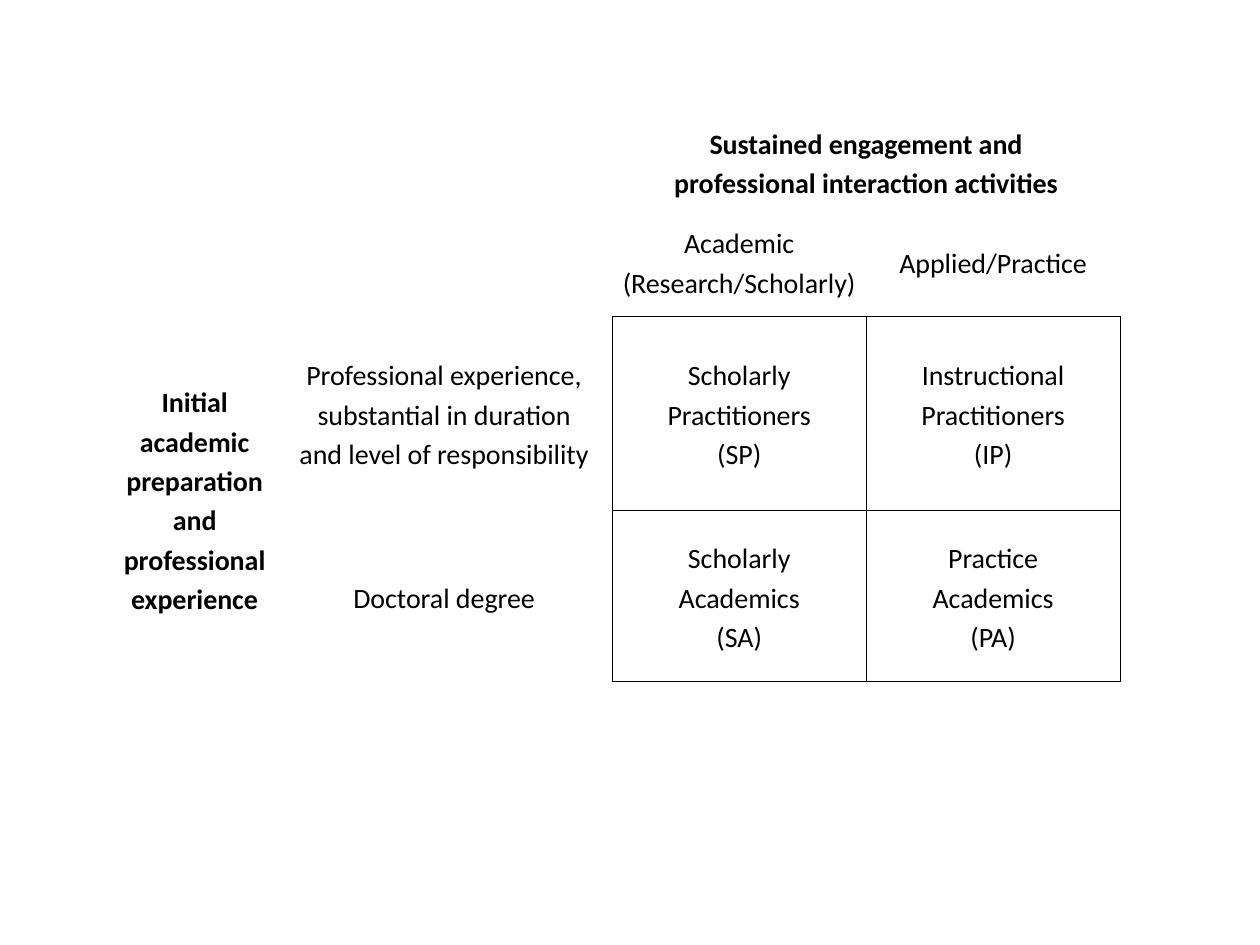
from lxml import etree
from pptx import Presentation
from pptx.dml.color import RGBColor
from pptx.enum.text import MSO_ANCHOR, PP_ALIGN
from pptx.oxml.ns import qn
from pptx.util import Inches, Pt

BLACK = RGBColor(0x00, 0x00, 0x00)
WHITE = RGBColor(0xFF, 0xFF, 0xFF)

COLUMN_WIDTHS = [1.29, 2.67, 2.015, 2.015]
ROW_HEIGHTS = [0.71, 0.87, 1.54, 1.36]
GRID_START = 2  # first row and first column of the four ruled cells

MERGES = [((0, 0), (1, 1)), ((0, 2), (0, 3)), ((2, 0), (3, 0))]
AXIS_TITLES = {(0, 2), (2, 0)}
CELL_LINES = {
    (0, 2): ["Sustained engagement and", "professional interaction activities"],
    (1, 2): ["Academic", "(Research/Scholarly)"],
    (1, 3): ["Applied/Practice"],
    (2, 0): ["Initial", "academic", "preparation", "and", "professional", "experience"],
    (2, 1): ["Professional experience,", "substantial in duration",
             "and level of responsibility"],
    (2, 2): ["Scholarly", "Practitioners", "(SP)"],
    (2, 3): ["Instructional", "Practitioners", "(IP)"],
    (3, 1): ["Doctoral degree"],
    (3, 2): ["Scholarly", "Academics", "(SA)"],
    (3, 3): ["Practice", "Academics", "(PA)"],
}


def ruled_sides(row, column):
    """Return the sides (L, R, T, B) of a cell that carry a line."""
    if row >= GRID_START and column >= GRID_START:
        return "LRTB"
    if row == GRID_START - 1 and column >= GRID_START:
        return "B"
    if column == GRID_START - 1 and row >= GRID_START:
        return "R"
    return ""


def set_borders(cell, sides):
    properties = cell._tc.get_or_add_tcPr()
    for position, side in enumerate("LRTB"):
        line = etree.Element(qn(f"a:ln{side}"), w=str(Pt(0.5)))
        if side in sides:
            fill = etree.SubElement(line, qn("a:solidFill"))
            etree.SubElement(fill, qn("a:srgbClr"), val=str(BLACK))
        else:
            etree.SubElement(line, qn("a:noFill"))
        properties.insert(position, line)


def write_lines(cell, lines, bold):
    frame = cell.text_frame
    frame.text = "\n".join(lines)
    for para in frame.paragraphs:
        para.alignment = PP_ALIGN.CENTER
        para.line_spacing = 1.15
        para.font.name = "Calibri"
        para.font.size = Pt(16)
        para.font.bold = bold
        para.font.color.rgb = BLACK


def add_faculty_matrix(page, left, top, width, height):
    table = page.shapes.add_table(
        len(ROW_HEIGHTS), len(COLUMN_WIDTHS), left, top, width, height).table
    table.first_row = False
    table.horz_banding = False
    for column, share in zip(table.columns, COLUMN_WIDTHS):
        column.width = int(width * share / sum(COLUMN_WIDTHS))
    for row, share in zip(table.rows, ROW_HEIGHTS):
        row.height = int(height * share / sum(ROW_HEIGHTS))

    for first, last in MERGES:
        table.cell(*first).merge(table.cell(*last))
    for row in range(len(ROW_HEIGHTS)):
        for column in range(len(COLUMN_WIDTHS)):
            cell = table.cell(row, column)
            cell.fill.solid()
            cell.fill.fore_color.rgb = WHITE
            cell.vertical_anchor = MSO_ANCHOR.MIDDLE
            cell.margin_left = cell.margin_right = Inches(0.07)
            cell.margin_top = cell.margin_bottom = 0
            set_borders(cell, ruled_sides(row, column))
            if (row, column) in CELL_LINES:
                write_lines(cell, CELL_LINES[row, column], (row, column) in AXIS_TITLES)


def main():
    deck = Presentation()
    deck.slide_width = Inches(10)
    deck.slide_height = Inches(7.5)
    page = deck.slides.add_slide(deck.slide_layouts[6])
    add_faculty_matrix(page, Inches(0.9), Inches(0.93), Inches(7.99), Inches(4.48))
    deck.save("out.pptx")


if __name__ == "__main__":
    main()
